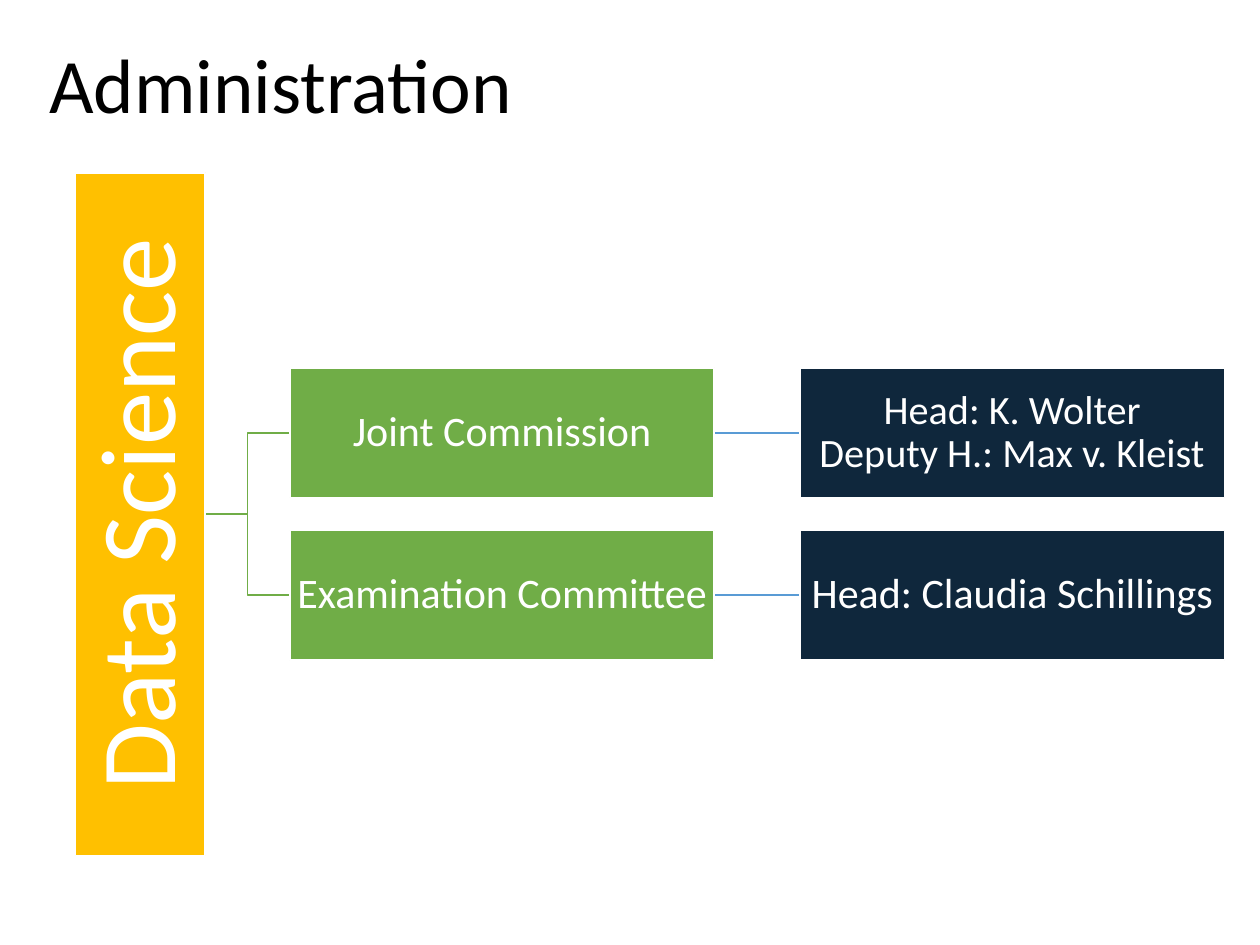
from dataclasses import dataclass

from lxml import etree
from pptx import Presentation
from pptx.dml.color import RGBColor
from pptx.enum import shapes as kinds, text as txt
from pptx.oxml.ns import qn
from pptx.util import Inches, Pt

COLORS = {
    "black": "000000",
    "white": "FFFFFF",
    "gold": "FFC000",
    "green": "70AD47",
    "navy": "0F273C",
    "blue": "599BD5",
}
BOX_W, BOX_H = 3.37, 1.03
ROOT_X, ROOT_LEN = 0.6, 5.42
BODY_X, HEAD_X = 2.3, 6.35
MID_Y = 4.08
ROW_STEP = 1.29


@dataclass
class Body:
    name: str
    head: str
    size: int


BODIES = [
    Body("Joint Commission", "Head: K. Wolter\vDeputy H.: Max v. Kleist", 23),
    Body("Examination Committee", "Head: Claudia Schillings", 24),
]


def rgb(name: str) -> RGBColor:
    return RGBColor.from_string(COLORS[name])


def write(shape, words: str, *, size: int, color: str = "white",
          align=txt.PP_ALIGN.CENTER, pad: tuple = (0.02, 0.02)) -> None:
    frame = shape.text_frame
    frame.word_wrap = True
    frame.auto_size = txt.MSO_AUTO_SIZE.NONE
    frame.vertical_anchor = txt.MSO_ANCHOR.MIDDLE
    frame.margin_left = frame.margin_right = Inches(pad[0])
    frame.margin_top = frame.margin_bottom = Inches(pad[1])
    para = frame.paragraphs[0]
    para.text = words
    para.alignment = align
    para.line_spacing = 0.9
    for run in para.runs:
        run.font.name = "Calibri"
        run.font.size = Pt(size)
        run.font.color.rgb = rgb(color)


def stroke(shape, color: str) -> None:
    shape.line.color.rgb = rgb(color)
    shape.line.width = Pt(1)


def box(slide, x: float, y: float, w: float, h: float, fill: str):
    shape = slide.shapes.add_shape(
        kinds.MSO_SHAPE.RECTANGLE, Inches(x), Inches(y), Inches(w), Inches(h))
    shape.shadow.inherit = False
    shape.fill.solid()
    shape.fill.fore_color.rgb = rgb(fill)
    stroke(shape, "white")
    return shape


def branch(slide, y: float) -> None:
    """Draw the bent line from the root to the row centred on y."""
    start, end = ROOT_X + BOX_H, BODY_X
    bend = (start + end) / 2
    first, *rest = [(Inches(px), Inches(py)) for px, py in
                    ((start, MID_Y), (bend, MID_Y), (bend, y), (end, y))]
    pen = slide.shapes.build_freeform(*first)
    pen.add_line_segments(rest, close=False)
    shape = pen.convert_to_shape()
    shape.shadow.inherit = False
    shape.fill.background()
    stroke(shape, "green")


def link(slide, y: float) -> None:
    """Draw the straight line from a body to its head."""
    line = slide.shapes.add_connector(
        kinds.MSO_CONNECTOR.STRAIGHT,
        Inches(BODY_X + BOX_W), Inches(y), Inches(HEAD_X), Inches(y))
    stroke(line, "blue")
    etree.SubElement(line._element.spPr, qn("a:effectLst"))


def root(slide) -> None:
    x = ROOT_X + (BOX_H - ROOT_LEN) / 2
    shape = box(slide, x, MID_Y - BOX_H / 2, ROOT_LEN, BOX_H, "gold")
    shape.rotation = 270
    write(shape, "Data Science", size=61, pad=(0.04, 0.04))


def row(slide, body: Body, y: float) -> None:
    link(slide, y)
    branch(slide, y)
    top = y - BOX_H / 2
    write(box(slide, BODY_X, top, BOX_W, BOX_H, "green"), body.name, size=24)
    write(box(slide, HEAD_X, top, BOX_W, BOX_H, "navy"), body.head,
          size=body.size)


def main() -> None:
    deck = Presentation()
    deck.slide_width, deck.slide_height = Inches(10), Inches(7.5)
    slide = deck.slides.add_slide(deck.slide_layouts[5])
    title = slide.shapes.title
    title.left, title.top = Inches(0.29), Inches(0.25)
    title.width, title.height = Inches(8.62), Inches(0.9)
    write(title, "Administration", size=44, color="black",
          align=txt.PP_ALIGN.LEFT, pad=(0.1, 0.05))
    for i, body in enumerate(BODIES):
        row(slide, body, MID_Y + (i - (len(BODIES) - 1) / 2) * ROW_STEP)
    root(slide)
    deck.save("out.pptx")


if __name__ == "__main__":
    main()
